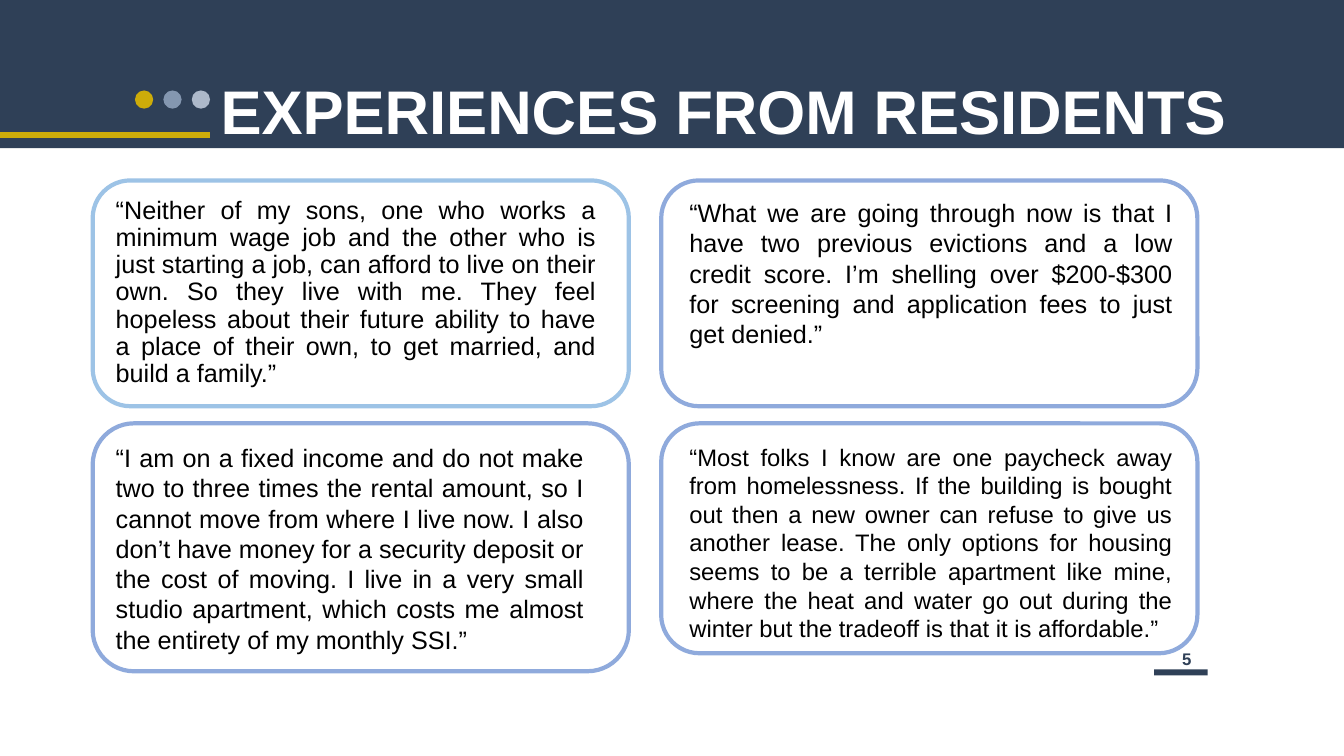
from pptx import Presentation
from pptx.dml.color import RGBColor
from pptx.enum.shapes import MSO_CONNECTOR, MSO_SHAPE
from pptx.enum.text import MSO_ANCHOR, PP_ALIGN
from pptx.oxml.ns import qn
from pptx.util import Pt
from lxml.etree import SubElement

NAVY = RGBColor(0x2F, 0x40, 0x57)
GOLD = RGBColor(0xCD, 0xAC, 0x09)
STEEL = RGBColor(0x84, 0x97, 0xB0)
MIST = RGBColor(0xAD, 0xB9, 0xCA)
SKY = RGBColor(0x9D, 0xC3, 0xE6)
BLUE = RGBColor(0x8F, 0xAA, 0xDC)
BLACK = RGBColor(0, 0, 0)
WHITE = RGBColor(255, 255, 255)

# frame height, frame colour, text left, top, width, height in the frame, size, line spacing, words
QUOTES = [
    (161.3, SKY, 9.4, 8.6, 357.1, 139.7, 18, 0.9,
     "“Neither of my sons, one who works a minimum wage job and the other who is just starting a job, "
     "can afford to live on their own. So they live with me. They feel hopeless about their future "
     "ability to have a place of their own, to get married, and build a family.”"),
    (161.3, BLUE, 13, 8.6, 359.3, 116.6, 18, None,
     "“What we are going through now is that I have two previous evictions and a low credit score. "
     "I’m shelling over $200-$300 for screening and application fees to just get denied.”"),
    (177.1, BLUE, 9.4, 10.1, 348.5, 159.8, 18, None,
     "“I am on a fixed income and do not make two to three times the rental amount, so I cannot move "
     "from where I live now. I also don’t have money for a security deposit or the cost of moving. "
     "I live in a very small studio apartment, which costs me almost the entirety of my monthly SSI.”"),
    (164.2, BLUE, 13, 10.1, 359.3, 151.2, 17, None,
     "“Most folks I know are one paycheck away from homelessness. If the building is bought out then "
     "a new owner can refuse to give us another lease. The only options for housing seems to be a "
     "terrible apartment like mine, where the heat and water go out during the winter but the "
     "tradeoff is that it is affordable.”"),
]


def write(slide, words, x, y, w, h, size=18, color=BLACK, bold=False,
          align=PP_ALIGN.LEFT, space=None, wrap=True, anchor=MSO_ANCHOR.TOP):
    frame = slide.shapes.add_textbox(Pt(x), Pt(y), Pt(w), Pt(h)).text_frame
    frame.word_wrap = wrap
    frame.vertical_anchor = anchor
    para = frame.paragraphs[0]
    para.alignment = align
    if space:
        para.line_spacing = space
    run = para.add_run()
    run.text = words
    font = run.font
    font.name, font.size, font.bold = "Arial", Pt(size), bold
    font.color.rgb = color


def draw(slide, kind, x, y, w, h, fill=None, line=None):
    shape = slide.shapes.add_shape(kind, Pt(x), Pt(y), Pt(w), Pt(h))
    shape.shadow.inherit = False
    if fill is None:
        shape.fill.background()
    else:
        shape.fill.solid()
        shape.fill.fore_color.rgb = fill
    if line is None:
        shape.line.fill.background()
    else:
        shape.line.color.rgb = line
        shape.line.width = Pt(3)


def header(slide, x, y, w, h):
    draw(slide, MSO_SHAPE.RECTANGLE, x, y, w, h, fill=NAVY)
    for i, color in enumerate((GOLD, STEEL, MIST)):
        draw(slide, MSO_SHAPE.OVAL, x + 96.4 + 20.3 * i, y + 64.6, 13, 13, fill=color)
    rule = slide.shapes.add_connector(
        MSO_CONNECTOR.STRAIGHT, Pt(x), Pt(y + 96.3), Pt(x + 150), Pt(y + 96.3))
    rule.line.color.rgb = GOLD
    rule.line.width = Pt(4.5)
    SubElement(rule._element.spPr, qn("a:effectLst"))
    write(slide, "EXPERIENCES FROM RESIDENTS", x + 150.5, y + 56.9, 761, 50.4,
          size=44, color=WHITE, bold=True, space=0.9, anchor=MSO_ANCHOR.MIDDLE)


def quotes(slide, x, y, w):
    """Two columns and two rows of framed quotes."""
    for i, (high, edge, dx, dy, wide, tall, size, space, words) in enumerate(QUOTES):
        row, col = divmod(i, 2)
        left, top = x + 406.1 * col, y + 173.5 * row
        draw(slide, MSO_SHAPE.ROUNDED_RECTANGLE, left, top, w, high, line=edge)
        write(slide, words, left + dx, top + dy, wide, tall, size=size,
              align=PP_ALIGN.JUSTIFY, space=space)


def footer(slide, x, y, w):
    write(slide, "5", x + 8.6, y - 18, 29.5, 21.6, size=12, color=NAVY, bold=True,
          align=PP_ALIGN.CENTER, wrap=False)
    draw(slide, MSO_SHAPE.RECTANGLE, x, y, w, 4.3, fill=NAVY)


def main():
    deck = Presentation()
    deck.slide_width, deck.slide_height = Pt(960), Pt(540)
    slide = deck.slides.add_slide(deck.slide_layouts[6])
    header(slide, 0, 0, 960, 105.8)
    footer(slide, 824.4, 478.1, 38.2)
    quotes(slide, 66.2, 128.9, 383)
    deck.save("out.pptx")


if __name__ == "__main__":
    main()
